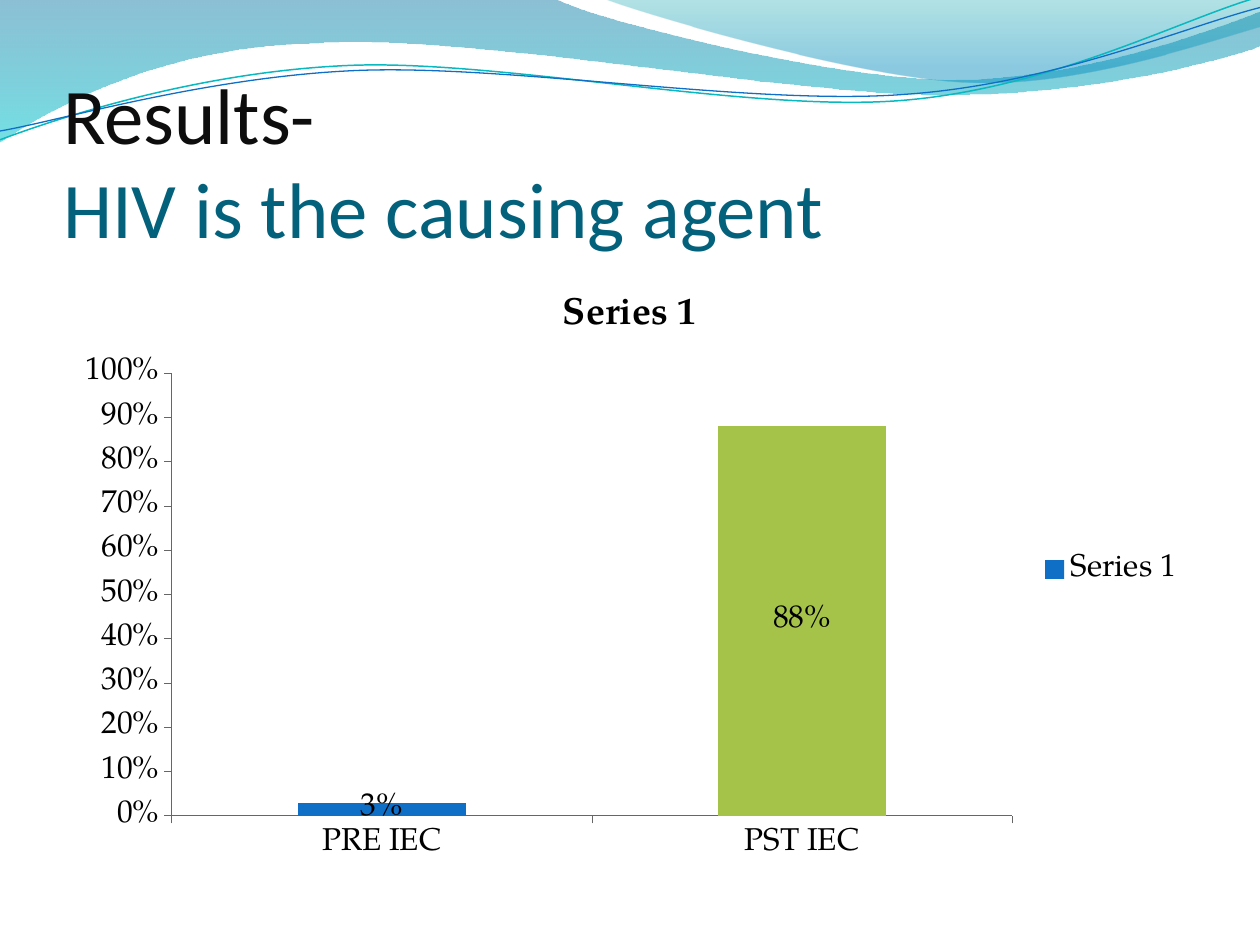
"""Build a results slide with a wave banner, a title and a column chart."""
from dataclasses import dataclass

from lxml import etree
from pptx import Presentation
from pptx.chart.data import CategoryChartData
from pptx.dml.color import RGBColor
from pptx.enum.chart import XL_CHART_TYPE, XL_LABEL_POSITION, XL_LEGEND_POSITION, XL_TICK_MARK
from pptx.enum.text import MSO_ANCHOR, MSO_AUTO_SIZE, PP_ALIGN
from pptx.oxml.ns import qn
from pptx.shapes.autoshape import Shape
from pptx.slide import Slide
from pptx.util import Inches, Pt

STACKED = XL_CHART_TYPE.COLUMN_STACKED
CENTER = XL_LABEL_POSITION.CENTER
LEGEND_RIGHT = XL_LEGEND_POSITION.RIGHT
TICK_OUTSIDE = XL_TICK_MARK.OUTSIDE
BOTTOM = MSO_ANCHOR.BOTTOM
NO_AUTOFIT = MSO_AUTO_SIZE.NONE
LEFT = PP_ALIGN.LEFT

BLACK = RGBColor(0x00, 0x00, 0x00)
NEAR_BLACK = RGBColor(0x0D, 0x0D, 0x0D)
DARK_TEAL = RGBColor(0x04, 0x61, 0x7B)
BLUE = RGBColor(0x0F, 0x6F, 0xC6)
GREEN = RGBColor(0xA5, 0xC2, 0x49)
AQUA = RGBColor(0x0A, 0xB8, 0xBF)
AXIS_GRAY = RGBColor(0x66, 0x66, 0x66)
BAND_BLUE = RGBColor(0x00, 0x74, 0xA1)
BAND_CYAN = RGBColor(0x00, 0xC6, 0xCF)
CREST_TEAL = RGBColor(0x00, 0xA1, 0xA9)
CREST_BLUE = RGBColor(0x00, 0x8B, 0xBF)
TITLE_FONT = "Calibri"
CHART_FONT = "TeX Gyre Pagella"

Point = tuple[float, float]


@dataclass(frozen=True)
class GradientStop:
    position: float
    color: RGBColor
    opacity: int


@dataclass(frozen=True)
class Band:
    start: Point
    segments: list[list[Point]]
    stops: list[GradientStop]


@dataclass(frozen=True)
class Wave:
    start: Point
    segments: list[list[Point]]
    color: RGBColor
    width: float


BANDS = [
    Band((0, 0),
         [[(4.4, -0.01)],
          [(4.76, 0.17), (6.64, 0.63), (7.58, 0.63)],
          [(8.53, 0.63), (9.58, 0.26), (10, 0.09)],
          [(10.01, 0.36)],
          [(9.83, 0.44), (8.7, 0.76), (7.46, 0.75)],
          [(6.22, 0.75), (3.82, 0.28), (2.57, 0.34)],
          [(1.29, 0.36), (0.46, 0.83), (-0.01, 1.13)],
          [(0, 0)]],
         [GradientStop(0, BAND_BLUE, 45), GradientStop(1, BAND_CYAN, 55)]),
    Band((4.79, -0.01),
         [[(5.09, 0.11), (6.82, 0.62), (7.69, 0.65)],
          [(8.56, 0.69), (9.61, 0.32), (10, 0.21)],
          [(10, 0)],
          [(4.79, -0.01)]],
         [GradientStop(0, CREST_TEAL, 30), GradientStop(0.8, CREST_BLUE, 45)]),
]
WAVES = [
    Wave((0, 1.11),
         [[(0.48, 0.93), (1.58, 0.57), (2.77, 0.52)],
          [(3.95, 0.47), (5.93, 0.89), (7.13, 0.8)],
          [(8.33, 0.71), (9.38, 0.15), (9.98, -0.02)]], AQUA, 0.85),
    Wave((0, 1.04),
         [[(0.47, 0.96), (1.64, 0.61), (2.83, 0.56)],
          [(4.03, 0.51), (5.97, 0.84), (7.17, 0.75)],
          [(8.36, 0.67), (9.41, 0.21), (10, 0.06)]], BLUE, 0.75),
]


def draw_outline(slide: Slide, outline: Band | Wave, close: bool) -> Shape:
    """Draw an outline given in slide inches, with cubic curves where it bends."""
    x, y = outline.start
    builder = slide.shapes.build_freeform(Inches(x), Inches(y))
    ends = [segment[-1] for segment in outline.segments]
    builder.add_line_segments([(Inches(x), Inches(y)) for x, y in ends], close=close)
    shape = builder.convert_to_shape()
    shape.shadow.inherit = False
    lines = list(shape._element.spPr.iter(qn("a:lnTo")))
    for line, segment in zip(lines, outline.segments):
        if len(segment) == 3:
            line.tag = qn("a:cubicBezTo")
            for index, (x, y) in enumerate(segment[:2]):
                point = etree.Element(qn("a:pt"), x=str(Inches(x) - shape.left),
                                      y=str(Inches(y) - shape.top))
                line.insert(index, point)
    return shape


def draw_band(slide: Slide, band: Band) -> None:
    """Draw a band with a translucent vertical gradient."""
    shape = draw_outline(slide, band, True)
    shape.line.fill.background()
    shape.fill.gradient()
    shape.fill.gradient_angle = 270
    for gradient_stop, stop in zip(shape.fill.gradient_stops, band.stops):
        gradient_stop.position = stop.position
        gradient_stop.color.rgb = stop.color
    colors = shape._element.spPr.iter(qn("a:srgbClr"))
    for color, stop in zip(colors, band.stops):
        etree.SubElement(color, qn("a:alpha"), val=str(stop.opacity * 1000))


def draw_wave(slide: Slide, wave: Wave) -> None:
    """Draw an open wave line."""
    shape = draw_outline(slide, wave, False)
    shape.fill.background()
    shape.line.color.rgb = wave.color
    shape.line.width = Pt(wave.width)


def format_title(slide: Slide) -> None:
    """Fill the title placeholder and bring it in front of the waves."""
    title = slide.shapes.title
    title.left, title.top, title.width, title.height = map(Inches, (0.5, 0.77, 9, 1.25))
    frame = title.text_frame
    frame.auto_size = NO_AUTOFIT
    frame.vertical_anchor = BOTTOM
    frame.margin_left = frame.margin_right = frame.margin_bottom = 0
    frame.margin_top = Inches(0.05)
    paragraph = frame.paragraphs[0]
    paragraph.alignment = LEFT
    paragraph.font.size = Pt(45)
    paragraph.font.name = TITLE_FONT
    heading = paragraph.add_run()
    heading.text = "Results-"
    heading.font.color.rgb = NEAR_BLACK
    paragraph.add_line_break()
    subject = paragraph.add_run()
    subject.text = "HIV is the causing agent"
    subject.font.color.rgb = DARK_TEAL
    slide.shapes._spTree.append(title._element)


def add_results_chart(slide: Slide) -> None:
    """Add the column chart of correct answers."""
    data = CategoryChartData(number_format="0%")
    data.categories = ["PRE IEC", "PST IEC"]
    data.add_series("Series 1", [0.03, 0.88])
    chart = slide.shapes.add_chart(
        STACKED, Inches(0.5), Inches(2.12), Inches(9), Inches(4.8), data).chart
    chart.font.size = Pt(18)
    chart.font.name = CHART_FONT
    chart.font.color.rgb = BLACK
    chart.has_title = True
    chart.chart_title.include_in_layout = False
    title = chart.chart_title.text_frame
    title.text = "Series 1"
    title_font = title.paragraphs[0].font
    title_font.size = Pt(21.6)
    title_font.bold = True
    title_font.name = CHART_FONT
    title_font.color.rgb = BLACK
    chart.has_legend = True
    chart.legend.position = LEGEND_RIGHT
    chart.legend.include_in_layout = False
    for axis in (chart.category_axis, chart.value_axis):
        axis.major_tick_mark = TICK_OUTSIDE
        axis.has_major_gridlines = False
        axis.format.line.color.rgb = AXIS_GRAY
        axis.format.line.width = Pt(0.5)
    value_axis = chart.value_axis
    value_axis.minimum_scale, value_axis.maximum_scale, value_axis.major_unit = 0, 1, 0.1
    value_axis.tick_labels.number_format = "0%"
    value_axis.tick_labels.number_format_is_linked = False
    plot = chart.plots[0]
    plot.vary_by_categories = False
    plot.gap_width, plot.overlap = 150, 100
    series = plot.series[0]
    for target, color in ((series, BLUE), (series.points[1], GREEN)):
        target.format.fill.solid()
        target.format.fill.fore_color.rgb = color
    labels = series.data_labels
    labels.show_value = True
    labels.number_format = "0%"
    labels.number_format_is_linked = False
    labels.position = CENTER


presentation = Presentation()
presentation.slide_width, presentation.slide_height = Inches(10), Inches(7.5)
results_slide = presentation.slides.add_slide(presentation.slide_layouts[5])
for banner_band in BANDS:
    draw_band(results_slide, banner_band)
for banner_wave in WAVES:
    draw_wave(results_slide, banner_wave)
format_title(results_slide)
add_results_chart(results_slide)
presentation.save("out.pptx")
